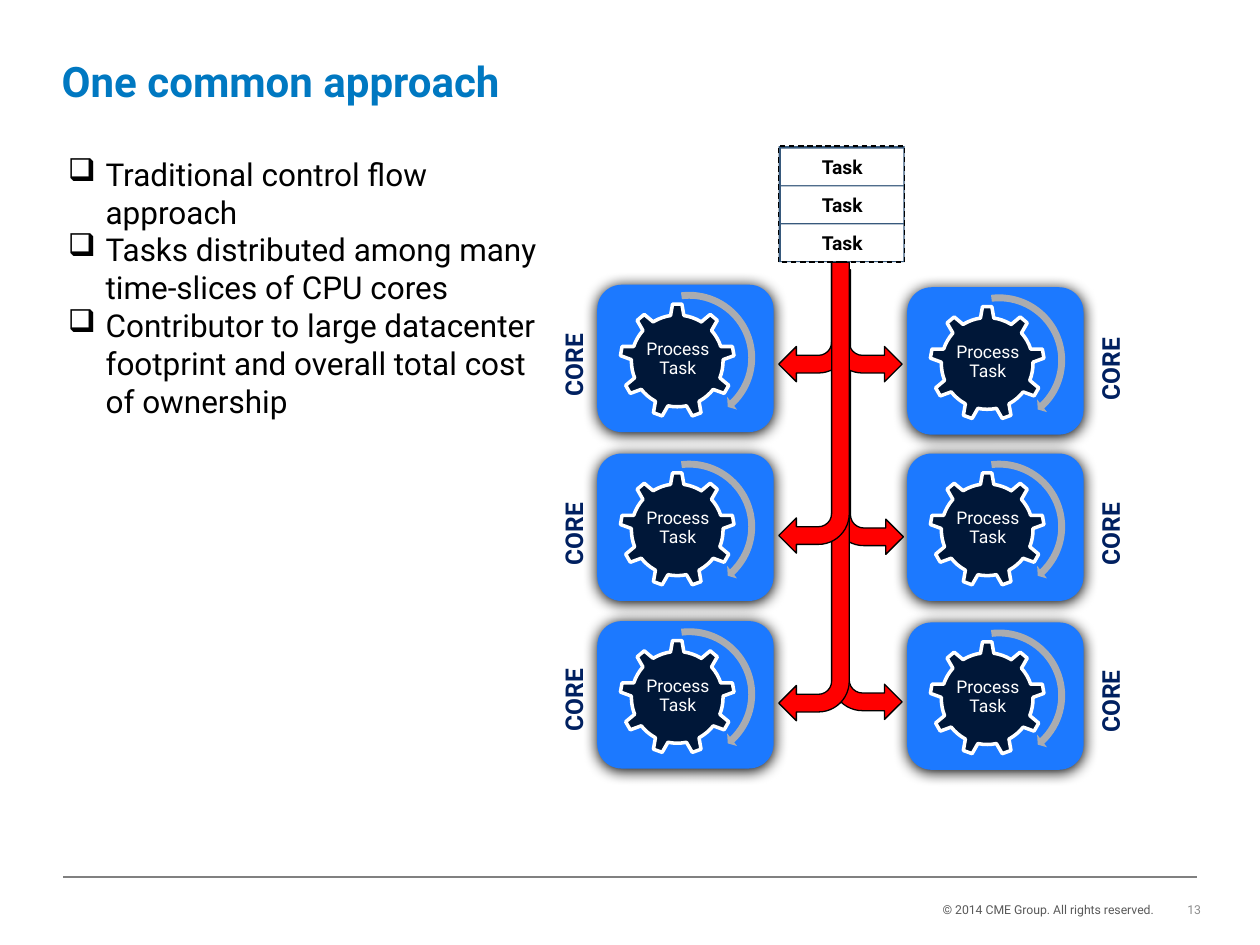
from lxml.etree import SubElement
from pptx import Presentation
from pptx.dml.color import RGBColor
from pptx.enum.dml import MSO_LINE
from pptx.enum.shapes import MSO_CONNECTOR, MSO_SHAPE
from pptx.enum.text import MSO_ANCHOR, MSO_AUTO_SIZE, PP_ALIGN
from pptx.oxml.ns import qn
from pptx.util import Inches, Pt

FONT = "Roboto"
RED, BLACK, WHITE = "FF0000", "000000", "FFFFFF"


def paint(fmt, color):
    """Give a fill or a line format one solid colour."""
    fill = getattr(fmt, "fill", fmt)
    fill.solid()
    fill.fore_color.rgb = RGBColor.from_string(color)


def form(shapes, kind, box, fill, line=None, width=0.75):
    """Add a preset shape without shadow."""
    shape = shapes.add_shape(kind, *map(Inches, box))
    shape.shadow.inherit = False
    paint(shape.fill, fill)
    if line:
        paint(shape.line, line)
        shape.line.width = Pt(width)
    else:
        shape.line.fill.background()
    return shape


def write(para, text, size, color, bold=False, align=PP_ALIGN.LEFT):
    """Add one run to a paragraph."""
    para.alignment = align
    run = para.add_run()
    run.text = text
    font = run.font
    font.name, font.size, font.bold = FONT, Pt(size), bold
    font.color.rgb = RGBColor.from_string(color)


def label(shapes, box, text, size, color, bold=False, align=PP_ALIGN.LEFT,
          inset=None, anchor=MSO_ANCHOR.TOP, wrap=True):
    """Add a text box with one line of text."""
    area = shapes.add_textbox(*map(Inches, box))
    frame = area.text_frame
    frame.word_wrap = wrap
    frame.vertical_anchor = anchor
    if inset is not None:
        frame.margin_left = frame.margin_right = Inches(inset)
        frame.margin_top = frame.margin_bottom = Inches(inset)
    write(frame.paragraphs[0], text, size, color, bold, align)
    return area


def bullets(shapes, box, items):
    """Add the bulleted list."""
    frame = shapes.add_textbox(*map(Inches, box)).text_frame
    frame.word_wrap = True
    for pos, item in enumerate(items):
        para = frame.add_paragraph() if pos else frame.paragraphs[0]
        props = para._p.get_or_add_pPr()
        props.set("marL", str(Inches(0.3)))
        props.set("indent", str(-Inches(0.3)))
        SubElement(props, qn("a:buChar")).set("char", "❑")
        write(para, item, 18, BLACK)


def glow(shape):
    """Give a shape a soft dark shadow."""
    effects = shape._element.spPr.find(qn("a:effectLst"))
    outer = SubElement(effects, qn("a:outerShdw"), blurRad=str(Pt(8.5)),
                       dist=str(Pt(1)), dir="5400000", rotWithShape="0")
    SubElement(outer, qn("a:srgbClr"), val=BLACK)


def core(shapes, box):
    """Add one core with its gear, text and turning arrow."""
    left, top, _, _ = box
    parts = shapes.add_group_shape().shapes
    glow(form(parts, MSO_SHAPE.ROUNDED_RECTANGLE, box, "1C79FF"))
    form(parts, MSO_SHAPE.GEAR_9, (left + 0.18, top + 0.15, 0.91, 0.91),
         "001738", WHITE, 2)
    text = label(parts, (left + 0.37, top + 0.36, 0.54, 0.47), "Process Task",
                 10, WHITE, align=PP_ALIGN.CENTER, inset=0.01,
                 anchor=MSO_ANCHOR.MIDDLE)
    text.text_frame.paragraphs[0].line_spacing = 0.9
    turn = form(parts, MSO_SHAPE.CIRCULAR_ARROW,
                (left + 0.17, top + 0.02, 1.12, 1.12), "ABACAF")
    for pos, value in enumerate((0.049, 3.126, 27.99, 157.733, 0.057)):
        turn.adjustments[pos] = value


def column(shapes, left, side, rows):
    """Add a column of cores, each with an upright name beside it."""
    for top, mark in rows:
        core(shapes, (left, top, 1.4, 1.17))
        name = label(shapes, (side, mark, 0.77, 0.34), "CORE", 14, "002060",
                     True, wrap=False)
        name.text_frame.auto_size = MSO_AUTO_SIZE.SHAPE_TO_FIT_TEXT
        name.rotation = 270


def branch(shapes, box, right):
    """Add a bent arrow running down and then to one side."""
    arrow = form(shapes, MSO_SHAPE.BENT_ARROW, box, RED, BLACK)
    arrow.rotation = 180
    if right:
        arrow._element.spPr.find(qn("a:xfrm")).set("flipH", "1")


def queue(shapes, box):
    """Add the stack of waiting tasks."""
    left, top, _, _ = box
    back = form(shapes, MSO_SHAPE.RECTANGLE, box, "37597C", BLACK)
    back.line.dash_style = MSO_LINE.DASH
    for row in range(3):
        task = form(shapes, MSO_SHAPE.RECTANGLE,
                    (left + 0.02, top + 0.02 + 0.3 * row, 0.97, 0.29), WHITE)
        frame = task.text_frame
        frame.vertical_anchor = MSO_ANCHOR.MIDDLE
        write(frame.paragraphs[0], "Task", 11, BLACK, True, PP_ALIGN.CENTER)


def footer(shapes, box):
    """Add the rule, the rights line and the page number."""
    left, top, width, _ = box
    rule = shapes.add_connector(
        MSO_CONNECTOR.STRAIGHT, Inches(left), Inches(top),
        Inches(left + width), Inches(top))
    paint(rule.line, "808080")
    rule.line.width = Pt(0.75)
    SubElement(rule._element.spPr, qn("a:effectLst"))
    label(shapes, (left + 6.75, top + 0.15, 2.03, 0.22),
          "© 2014 CME Group. All rights reserved. ", 7, "595959",
          align=PP_ALIGN.RIGHT, wrap=False)
    label(shapes, (left + 8.63, top + 0.06, 0.5, 0.4), "13", 7, "8C8C8C",
          align=PP_ALIGN.RIGHT, anchor=MSO_ANCHOR.MIDDLE)


def main():
    """Build the slide and save it."""
    deck = Presentation()
    deck.slide_width, deck.slide_height = Inches(10), Inches(7.5)
    shapes = deck.slides.add_slide(deck.slide_layouts[6]).shapes
    footer(shapes, (0.5, 6.96, 9, 0.46))
    label(shapes, (0.49, 0.44, 9.04, 0.38), "One common approach", 24,
          "0078C1", True, inset=0)
    column(shapes, 4.74, 4.17, ((2.26, 2.69), (3.6, 4.03), (4.93, 5.35)))
    column(shapes, 7.2, 8.43, ((2.28, 2.72), (3.6, 4.03), (4.94, 5.36)))
    for left, top, height, right in (
            (6.6, 2.08, 3.63, True), (6.61, 2.14, 2.26, True),
            (6.6, 2.08, 0.95, True), (6.18, 2.14, 3.58, False),
            (6.18, 2.08, 0.95, False), (6.18, 2.08, 2.31, False)):
        branch(shapes, (left, top, 0.56, height), right)
    queue(shapes, (6.18, 1.16, 1, 0.92))
    bullets(shapes, (0.44, 1.18, 3.94, 2.52), (
        "Traditional control flow approach",
        "Tasks distributed among many time-slices of CPU cores",
        "Contributor to large datacenter footprint and overall total cost "
        "of ownership"))
    deck.save("out.pptx")


if __name__ == "__main__":
    main()
